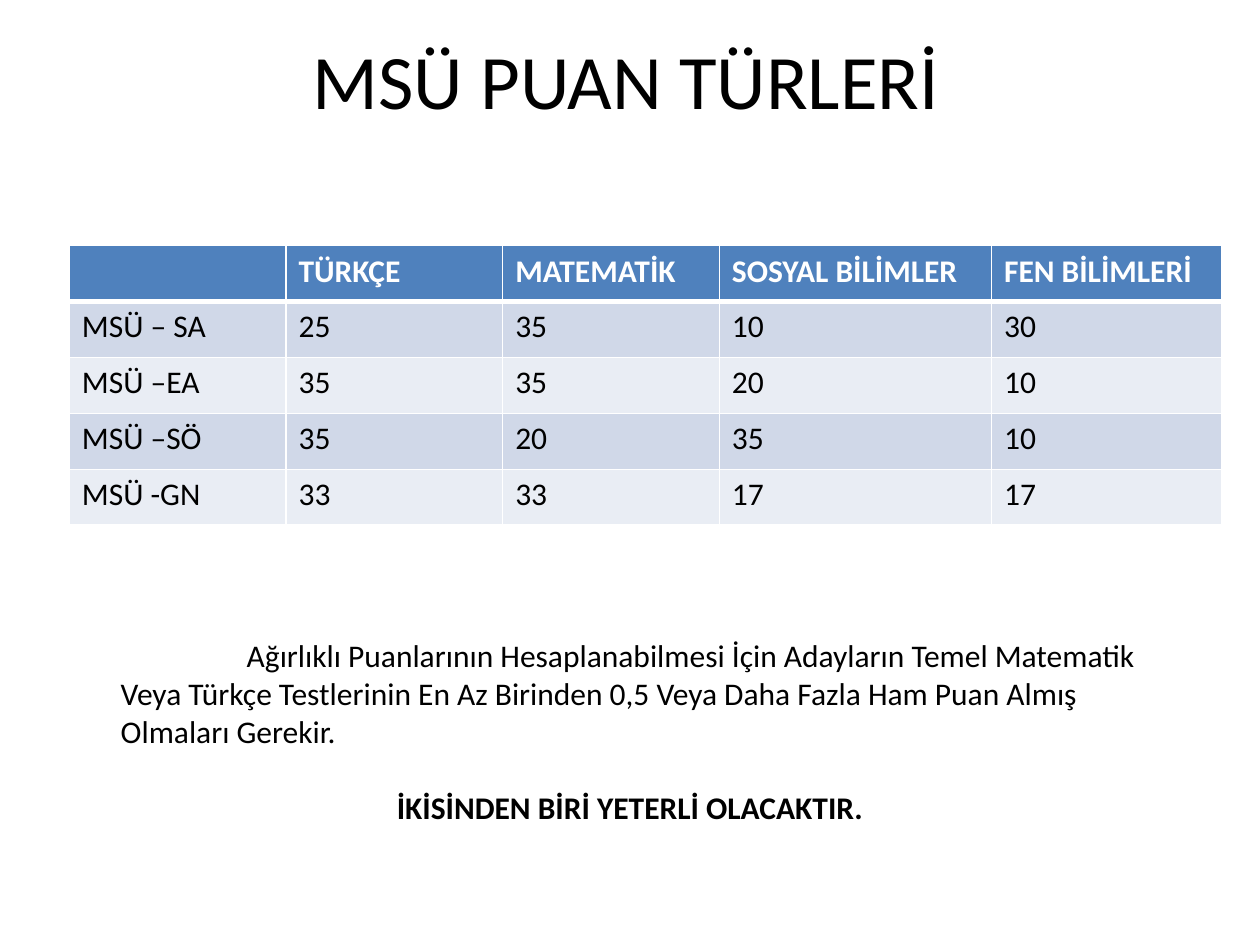
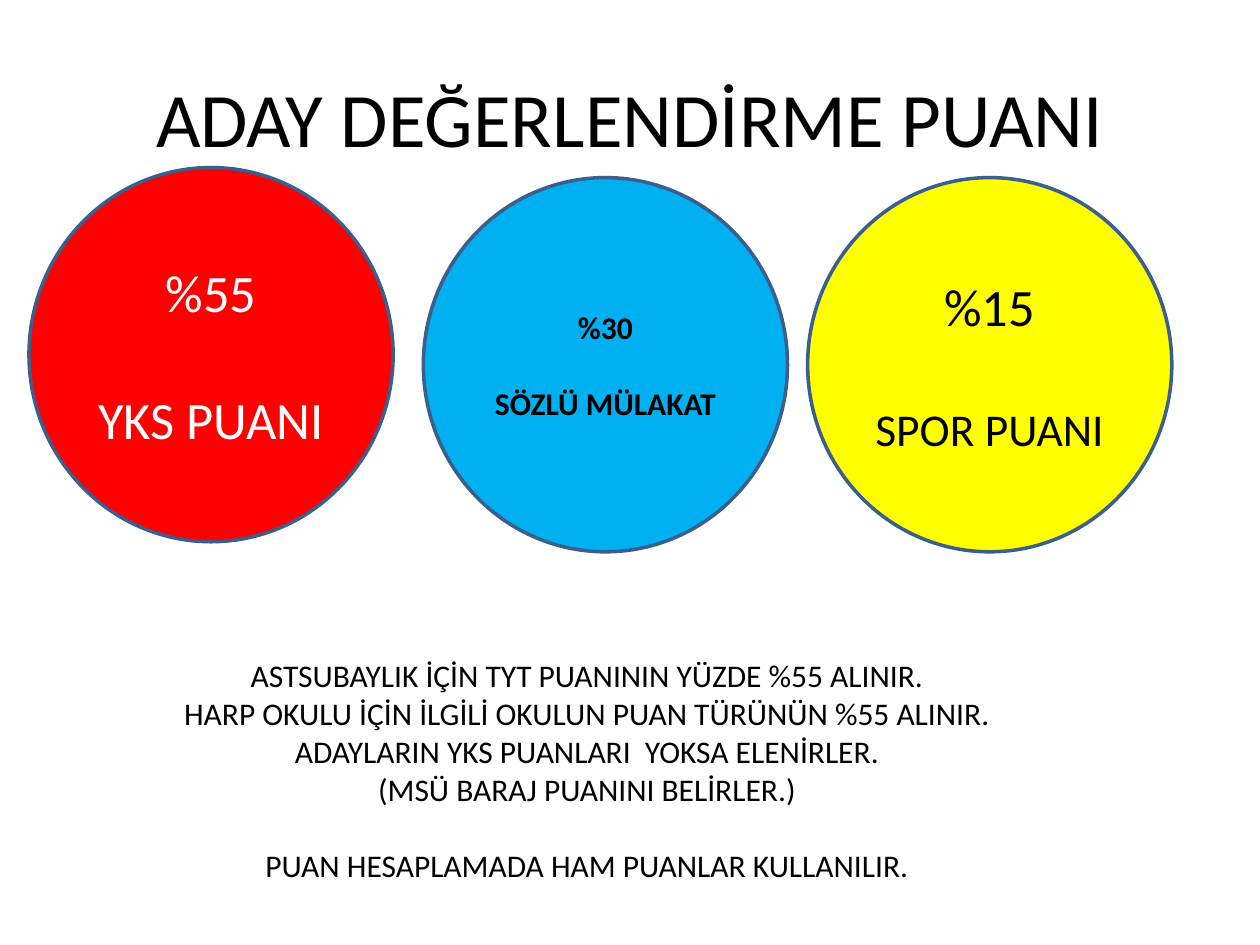
from lxml import etree
from pptx import Presentation
from pptx import util as u
from pptx.dml.color import RGBColor
from pptx.enum import shapes, text
from pptx.oxml import ns

FONT = "Calibri"
LINE = 1.22
COLORS = {
    "black": "000000", "white": "FFFFFF", "header": "4F81BD",
    "band_dark": "D0D8E8", "band_light": "E9EDF4", "outline": "3A5F8C",
    "red": "FF0000", "blue": "00B0F0", "yellow": "FFFF00",
}

SCORE_TITLE = "MSÜ PUAN TÜRLERİ"
SCORES = [
    ["", "TÜRKÇE", "MATEMATİK", "SOSYAL BİLİMLER", "FEN BİLİMLERİ"],
    ["MSÜ – SA", "25", "35", "10", "30"],
    ["MSÜ –EA", "35", "35", "20", "10"],
    ["MSÜ –SÖ", "35", "20", "35", "10"],
    ["MSÜ -GN", "33", "33", "17", "17"],
]
COLUMN_WIDTHS = [1.72, 1.72, 1.72, 2.16, 1.83]
ROW_HEIGHT = 0.444
SCORE_NOTE = [
    {"text": "Ağırlıklı Puanlarının Hesaplanabilmesi İçin Adayların Temel Matematik "
             "Veya Türkçe Testlerinin En Az Birinden 0,5 Veya Daha Fazla Ham Puan Almış "
             "Olmaları Gerekir.", "align": "LEFT", "indent": 1},
    {"text": "İKİSİNDEN BİRİ YETERLİ OLACAKTIR.", "bold": True, "gap": 18 * LINE},
]

WEIGHT_TITLE = "ADAY DEĞERLENDİRME PUANI"
CIRCLE_SIZE = (2.89, 2.97)
CIRCLES = [
    {"at": (0.23, 1.33), "fill": "red", "color": "white", "bold": False,
     "lines": [("%55", 30), ("YKS PUANI", 30)]},
    {"at": (3.36, 1.41), "fill": "blue", "color": "black", "bold": True,
     "lines": [("%30", 18), ("SÖZLÜ MÜLAKAT", 18)]},
    {"at": (6.41, 1.41), "fill": "yellow", "color": "black", "bold": False,
     "lines": [("%15", 30), ("SPOR PUANI", 26)]},
]
WEIGHT_NOTE = [
    {"text": "ASTSUBAYLIK İÇİN TYT PUANININ YÜZDE %55 ALINIR."},
    {"text": "HARP OKULU İÇİN İLGİLİ OKULUN PUAN TÜRÜNÜN %55 ALINIR."},
    {"text": "ADAYLARIN YKS PUANLARI  YOKSA ELENİRLER."},
    {"text": "(MSÜ BARAJ PUANINI BELİRLER.)"},
    {"text": "PUAN HESAPLAMADA HAM PUANLAR KULLANILIR.", "gap": 18 * LINE},
]


def rgb(name):
    return RGBColor.from_string(COLORS[name])


def box(*lengths):
    return [u.Inches(n) for n in lengths]


def write(tf, items):
    for i, item in enumerate(items):
        p = tf.add_paragraph() if i else tf.paragraphs[0]
        p.text = item["text"]
        p.alignment = getattr(text.PP_ALIGN, item.get("align", "CENTER"))
        p.space_before = u.Pt(item.get("gap", 0))
        p.font.name = FONT
        p.font.size = u.Pt(item.get("size", 18))
        p.font.bold = item.get("bold", False)
        p.font.color.rgb = rgb(item.get("color", "black"))
        if "indent" in item:
            p._p.get_or_add_pPr().set("indent", str(u.Inches(item["indent"])))


def add_text(s, at, items, anchor="TOP", wrap=True):
    tf = s.shapes.add_textbox(*box(*at)).text_frame
    tf.word_wrap = wrap
    tf.vertical_anchor = getattr(text.MSO_ANCHOR, anchor)
    write(tf, items)


def add_title(s, left, top, title):
    add_text(s, (left, top, 9, 1.25), [{"text": title, "size": 44}], "MIDDLE")


def border(cell, side, width):
    ln = etree.SubElement(cell._tc.get_or_add_tcPr(), ns.qn("a:ln" + side), w=str(u.Pt(width)))
    fill = etree.SubElement(ln, ns.qn("a:solidFill"))
    etree.SubElement(fill, ns.qn("a:srgbClr"), val=COLORS["white"])


def add_scores(s, left, top):
    size = sum(COLUMN_WIDTHS), ROW_HEIGHT * len(SCORES)
    table = s.shapes.add_table(len(SCORES), len(COLUMN_WIDTHS), *box(left, top, *size)).table
    for column, width in zip(table.columns, COLUMN_WIDTHS):
        column.width = u.Inches(width)
    for r, values in enumerate(SCORES):
        table.rows[r].height = u.Inches(ROW_HEIGHT)
        fill = ("band_dark" if r % 2 else "band_light") if r else "header"
        for c, value in enumerate(values):
            cell = table.cell(r, c)
            for side, width in (("L", 1), ("R", 1), ("T", 3 if r == 1 else 1), ("B", 1 if r else 3)):
                border(cell, side, width)
            cell.fill.solid()
            cell.fill.fore_color.rgb = rgb(fill)
            write(cell.text_frame, [{"text": value, "align": "LEFT", "bold": r == 0,
                                     "color": "black" if r else "white"}])


def add_circle(s, circle):
    sp = s.shapes.add_shape(shapes.MSO_SHAPE.OVAL, *box(*circle["at"], *CIRCLE_SIZE))
    sp.shadow.inherit = False
    sp.fill.solid()
    sp.fill.fore_color.rgb = rgb(circle["fill"])
    sp.line.color.rgb = rgb("outline")
    sp.line.width = u.Pt(2)
    tf = sp.text_frame
    tf.vertical_anchor = text.MSO_ANCHOR.MIDDLE
    blank = circle["lines"][0][1] * LINE
    write(tf, [{"text": line, "size": size, "gap": blank if i else 0,
                "color": circle["color"], "bold": circle["bold"]}
               for i, (line, size) in enumerate(circle["lines"])])


def main():
    prs = Presentation()
    prs.slide_width, prs.slide_height = box(10, 7.5)
    blank = prs.slide_layouts[6]

    s = prs.slides.add_slide(blank)
    add_title(s, 0.47, 0, SCORE_TITLE)
    add_scores(s, 0.55, 1.95)
    add_text(s, (0.86, 5, 8.28, 1.62), SCORE_NOTE)

    s = prs.slides.add_slide(blank)
    add_title(s, 0.5, 0.3, WEIGHT_TITLE)
    for circle in CIRCLES:
        add_circle(s, circle)
    add_text(s, (1.33, 5.16, 6.66, 1.92), WEIGHT_NOTE, wrap=False)

    prs.save("out.pptx")


if __name__ == "__main__":
    main()
